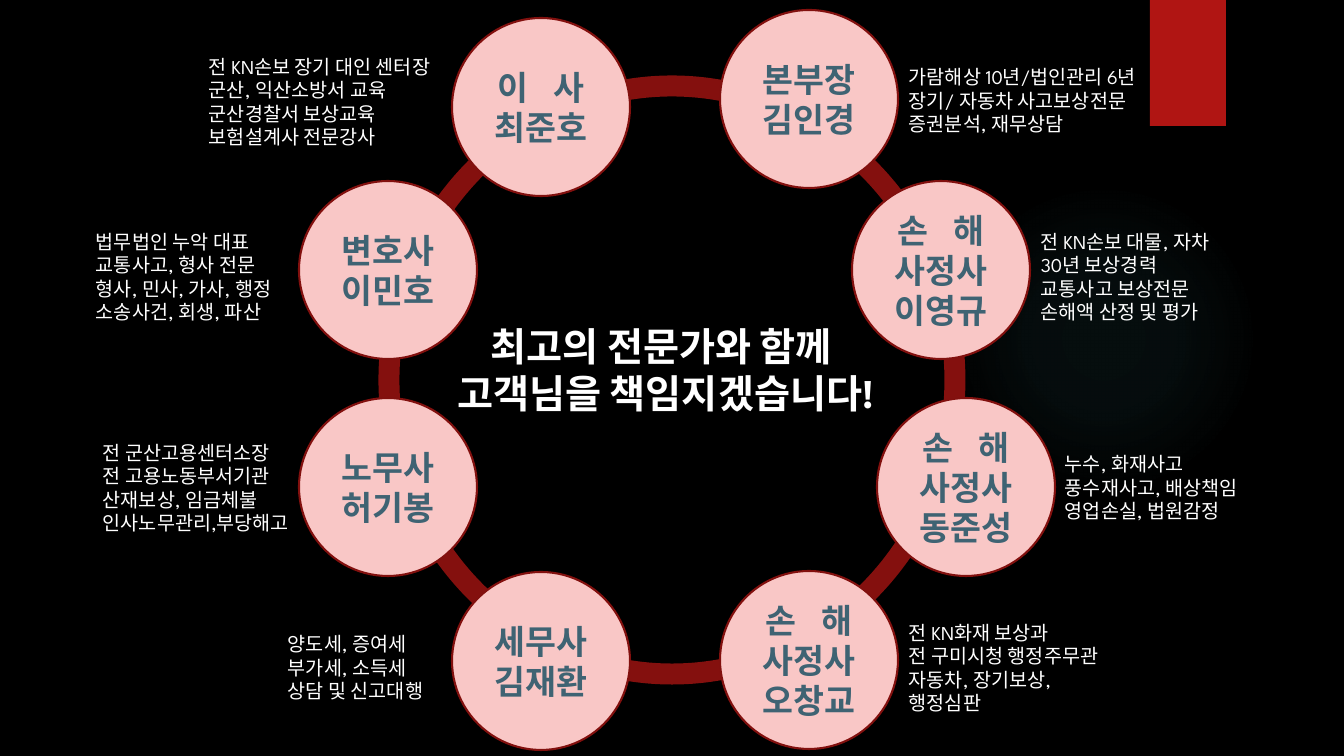
"""Build the slide that presents eight experts around a ring."""
import pptx
import pptx.util
import pptx.dml.color
import pptx.enum.shapes
import pptx.enum.text
import pptx.oxml
import pptx.oxml.ns

COLORS = {"background": "000000", "ribbon": "B01513", "ring": "84100E", "glow": "50B9C1",
          "circle": "F9C7C6", "outline": "82100E", "name": "3F6373", "text": "FFFFFF"}
FONT = "League Spartan"
WIDTH, HEIGHT = 1344, 756
DIAMETER, DETAIL_HEIGHT = 178, 139
WIDE_GAP = "1300"
GLOW = (949, 184, 310, 310)
GLOW_STOPS = [(0, 7), (36, 6), (69, 0)]
RIBBON = (1150, 0, 76, 126)
RING = (389, 86, 566, 588)
SLOGAN_BOX = (423, 317, 485, 105)
SLOGAN = ["최고의 전문가와 함께 ", "고객님을 책임지겠습니다!"]

EXPERTS = [
    {"circle": (452, 18), "title": [("이", "사"), ("최준호",)], "box": (199, 32, 273),
     "details": ["전 KN손보 장기 대인 센터장", "군산, 익산소방서 교육", "군산경찰서 보상교육",
                 "보험설계사 전문강사"]},
    {"circle": (299, 181), "title": [("변호사 이민호",)], "box": (86, 207, 223),
     "details": ["법무법인 누악 대표", "교통사고, 형사 전문", "형사, 민사, 가사, 행정",
                 "소송사건, 회생, 파산"]},
    {"circle": (299, 398), "title": [("노무사 허기봉",)], "box": (93, 418, 225),
     "details": ["전 군산고용센터소장", "전 고용노동부서기관", "산재보상, 임금체불",
                 "인사노무관리,부당해고"]},
    {"circle": (452, 572), "title": [("세무사 김재환",)], "box": (278, 598, 173),
     "details": ["양도세, 증여세", "부가세, 소득세", "상담 및 신고대행"]},
    {"circle": (720, 10), "title": [("본부장",), ("김인경",)], "box": (899, 31, 334),
     "details": ["가람해상 10년/법인관리 6년", "장기/ 자동차 사고보상전문", "증권분석, 재무상담"]},
    {"circle": (720, 571), "title": [("손", "해"), ("사정사 오창교",)], "box": (899, 598, 290),
     "details": ["전 KN화재 보상과", "전 구미시청 행정주무관", "자동차, 장기보상,", "행정심판"]},
    {"circle": (852, 181), "title": [("손", "해"), ("사정사 이영규",)], "box": (1031, 207, 290),
     "details": ["전 KN손보 대물, 자차", "30년 보상경력", "교통사고 보상전문", "손해액 산정 및 평가"]},
    {"circle": (877, 398), "title": [("손", "해"), ("사정사 동준성",)], "box": (1055, 418, 288),
     "details": ["누수, 화재사고", "풍수재사고, 배상책임", "영업손실, 법원감정"]},
]


def px(length):
    return pptx.util.Emu(round(length * 914400 / 100.8))


def rgb(key):
    return pptx.dml.color.RGBColor.from_string(COLORS[key])


def add_figure(slide, kind, frame, fill=None, line=None, weight=0):
    figure = slide.shapes.add_shape(kind, *map(px, frame))
    figure.shadow.inherit = False
    if fill:
        figure.fill.solid()
        figure.fill.fore_color.rgb = rgb(fill)
    else:
        figure.fill.background()
    if line:
        figure.line.color.rgb = rgb(line)
        figure.line.width = pptx.util.Pt(weight)
    else:
        figure.line.fill.background()
    return figure


def add_glow(slide):
    glow = add_figure(slide, OVAL, GLOW)
    stops = "".join(
        f'<a:gs pos="{position * 1000}"><a:srgbClr val="{COLORS["glow"]}">'
        f'<a:alpha val="{alpha * 1000}"/></a:srgbClr></a:gs>' for position, alpha in GLOW_STOPS)
    gradient = pptx.oxml.parse_xml(
        f'<a:gradFill {pptx.oxml.ns.nsdecls("a")}><a:gsLst>{stops}</a:gsLst><a:path path="circle">'
        '<a:fillToRect l="50000" t="50000" r="50000" b="50000"/></a:path></a:gradFill>')
    properties = glow.element.spPr
    empty_fill = properties.find(pptx.oxml.ns.qn("a:noFill"))
    properties.replace(empty_fill, gradient)


def write(shape, lines, size, color, align, bold=False, anchor=None):
    frame = shape.text_frame
    frame.word_wrap = True
    frame.vertical_anchor = anchor
    for index, parts in enumerate(lines):
        paragraph = frame.paragraphs[0] if index == 0 else frame.add_paragraph()
        paragraph.alignment = align
        pieces = parts if len(parts) == 1 else (parts[0], " ", parts[1])
        for piece in pieces:
            run = paragraph.add_run()
            run.text = piece
            run.font.name = FONT
            run.font.size = pptx.util.Pt(size)
            run.font.bold = bold
            run.font.color.rgb = rgb(color)
            if piece == " ":
                run.font._element.set("spc", WIDE_GAP)


OVAL = pptx.enum.shapes.MSO_SHAPE.OVAL
RECTANGLE = pptx.enum.shapes.MSO_SHAPE.RECTANGLE
CENTER = pptx.enum.text.PP_ALIGN.CENTER
LEFT = pptx.enum.text.PP_ALIGN.LEFT
MIDDLE = pptx.enum.text.MSO_ANCHOR.MIDDLE


def main():
    deck = pptx.Presentation()
    deck.slide_width, deck.slide_height = px(WIDTH), px(HEIGHT)
    slide = deck.slides.add_slide(deck.slide_layouts[6])
    slide.background.fill.solid()
    slide.background.fill.fore_color.rgb = rgb("background")

    add_glow(slide)
    add_figure(slide, RECTANGLE, RIBBON, "ribbon")
    add_figure(slide, OVAL, RING, line="ring", weight=15)
    for expert in EXPERTS:
        circle = add_figure(slide, OVAL, (*expert["circle"], DIAMETER, DIAMETER),
                            "circle", "outline", 1.5)
        write(circle, expert["title"], 24, "name", CENTER, True, MIDDLE)

    slogan = slide.shapes.add_textbox(*map(px, SLOGAN_BOX))
    write(slogan, [(line,) for line in SLOGAN], 28, "text", CENTER, True)
    for expert in EXPERTS:
        details = slide.shapes.add_textbox(*map(px, (*expert["box"], DETAIL_HEIGHT)))
        write(details, [(line,) for line in expert["details"]], 14, "text", LEFT, anchor=MIDDLE)
    deck.save("out.pptx")


if __name__ == "__main__":
    main()
